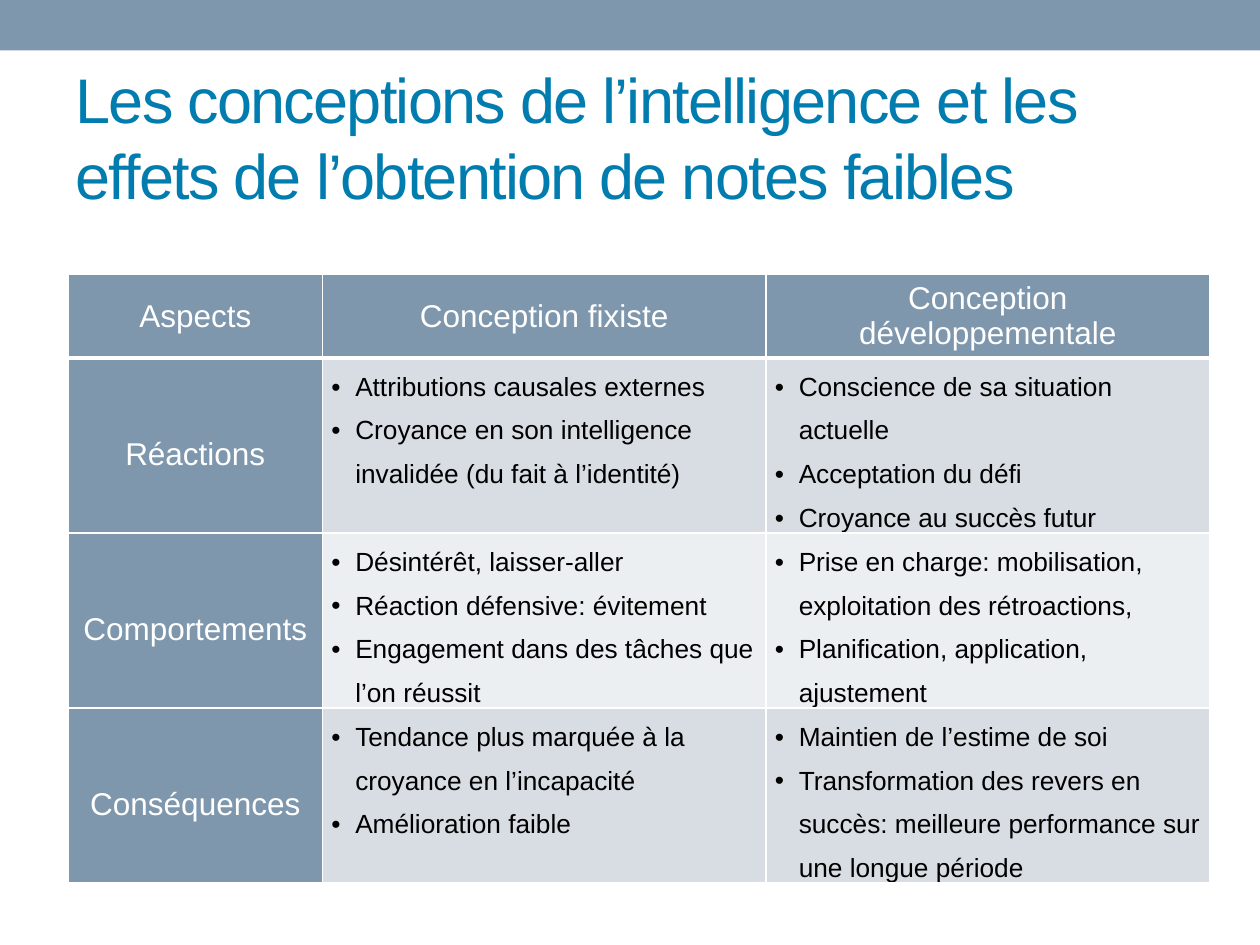
from lxml.etree import SubElement
from pptx import Presentation
from pptx.dml.color import RGBColor
from pptx.enum.shapes import MSO_SHAPE
from pptx.enum.text import MSO_ANCHOR, MSO_AUTO_SIZE, PP_ALIGN
from pptx.oxml.ns import qn
from pptx.util import Inches, Pt

# Content
TITLE = "Les conceptions de l’intelligence et les effets de l’obtention de notes faibles"
HEADERS = ["Aspects", "Conception fixiste", "Conception développementale"]
ASPECTS = [
    ("Réactions",
     ["Attributions causales externes",
      "Croyance en son intelligence invalidée (du fait à l’identité)"],
     ["Conscience de sa situation actuelle",
      "Acceptation du défi",
      "Croyance au succès futur"]),
    ("Comportements",
     ["Désintérêt, laisser-aller",
      "Réaction défensive: évitement",
      "Engagement dans des tâches que l’on réussit"],
     ["Prise en charge: mobilisation, exploitation des rétroactions,",
      "Planification, application, ajustement"]),
    ("Conséquences",
     ["Tendance plus marquée à la croyance en l’incapacité",
      "Amélioration faible"],
     ["Maintien de l’estime de soi",
      "Transformation des revers en succès: meilleure performance "
      "sur une longue période"]),
]

THEME = {
    "font": "Arial",
    "accent": "7E97AD", "title": "007CAF", "light": "FFFFFF", "dark": "000000",
    "bands": ["D8DDE3", "ECEFF1"],
    "title_size": 36, "label_size": 18, "body_size": 15,
}
COLUMN_WIDTHS = [2.02, 3.52, 3.52]
ROW_HEIGHTS = [0.65] + [1.39] * len(ASPECTS)
BULLET_INDENT = Inches(0.19)


def style_font(font, size, color):
    font.name = THEME["font"]
    font.size = Pt(size)
    font.bold = False
    font.color.rgb = RGBColor.from_string(color)


def set_borders(cell, bottom=1, top=1):
    properties = cell._tc.get_or_add_tcPr()
    for side, width in (("L", 1), ("R", 1), ("T", top), ("B", bottom)):
        line = SubElement(properties, qn(f"a:ln{side}"), w=str(Pt(width)))
        fill = SubElement(line, qn("a:solidFill"))
        SubElement(fill, qn("a:srgbClr"), val=THEME["light"])


def fill_cell(cell, color):
    cell.fill.solid()
    cell.fill.fore_color.rgb = RGBColor.from_string(color)


def set_body_margins(cell):
    cell.margin_left = cell.margin_right = Inches(0.07)
    cell.margin_top = cell.margin_bottom = 0


def write_label(cell, text, line_spacing=1.0):
    cell.vertical_anchor = MSO_ANCHOR.MIDDLE
    para = cell.text_frame.paragraphs[0]
    para.text = text
    para.alignment = PP_ALIGN.CENTER
    para.line_spacing = line_spacing
    style_font(para.font, THEME["label_size"], THEME["light"])


def write_bullets(cell, items):
    frame = cell.text_frame
    for index, item in enumerate(items):
        para = frame.add_paragraph() if index else frame.paragraphs[0]
        para.text = item
        para.line_spacing = 1.5
        properties = para._p.get_or_add_pPr()
        properties.set("marL", str(BULLET_INDENT))
        properties.set("indent", str(-BULLET_INDENT))
        SubElement(properties, qn("a:buFont"), typeface=THEME["font"])
        SubElement(properties, qn("a:buChar"), char="•")
        style_font(para.font, THEME["body_size"], THEME["dark"])


def add_top_bar(page, width):
    bar = page.shapes.add_shape(MSO_SHAPE.RECTANGLE, 0, 0, width, Inches(0.4))
    bar.shadow.inherit = False
    bar.fill.solid()
    bar.fill.fore_color.rgb = RGBColor.from_string(THEME["accent"])
    bar.line.fill.background()


def write_title(page):
    box = page.shapes.title
    box.left, box.top = Inches(0.5), Inches(0.84)
    box.width, box.height = Inches(9), Inches(1.08)
    frame = box.text_frame
    frame.text = TITLE
    frame.word_wrap = True
    frame.auto_size = MSO_AUTO_SIZE.NONE
    frame.vertical_anchor = MSO_ANCHOR.MIDDLE
    frame.margin_bottom = Inches(0.65)
    para = frame.paragraphs[0]
    para.alignment = PP_ALIGN.LEFT
    style_font(para.font, THEME["title_size"], THEME["title"])
    para.runs[0]._r.get_or_add_rPr().set("spc", "-100")


def add_aspects_table(page):
    table = page.shapes.add_table(
        len(ROW_HEIGHTS), len(COLUMN_WIDTHS), Inches(0.54), Inches(2.18),
        Inches(sum(COLUMN_WIDTHS)), Inches(sum(ROW_HEIGHTS))).table
    table.first_row = table.horz_banding = False
    for column, width in zip(table.columns, COLUMN_WIDTHS):
        column.width = Inches(width)
    for row, height in zip(table.rows, ROW_HEIGHTS):
        row.height = Inches(height)

    # Header row, with a thick rule below
    for column, header in enumerate(HEADERS):
        cell = table.cell(0, column)
        set_borders(cell, bottom=3)
        fill_cell(cell, THEME["accent"])
        write_label(cell, header)

    # One row per aspect, in alternating bands
    for row, (aspect, *conceptions) in enumerate(ASPECTS, start=1):
        band = THEME["bands"][(row - 1) % 2]
        for column in range(len(HEADERS)):
            cell = table.cell(row, column)
            set_borders(cell, top=3 if row == 1 else 1)
            fill_cell(cell, band if column else THEME["accent"])
            set_body_margins(cell)
            if column:
                write_bullets(cell, conceptions[column - 1])
            else:
                write_label(cell, aspect, line_spacing=1.5)


def main():
    deck = Presentation()
    deck.slide_width, deck.slide_height = Inches(10), Inches(7.5)
    page = deck.slides.add_slide(deck.slide_layouts[5])
    add_top_bar(page, deck.slide_width)
    write_title(page)
    add_aspects_table(page)
    deck.save("out.pptx")


if __name__ == "__main__":
    main()
